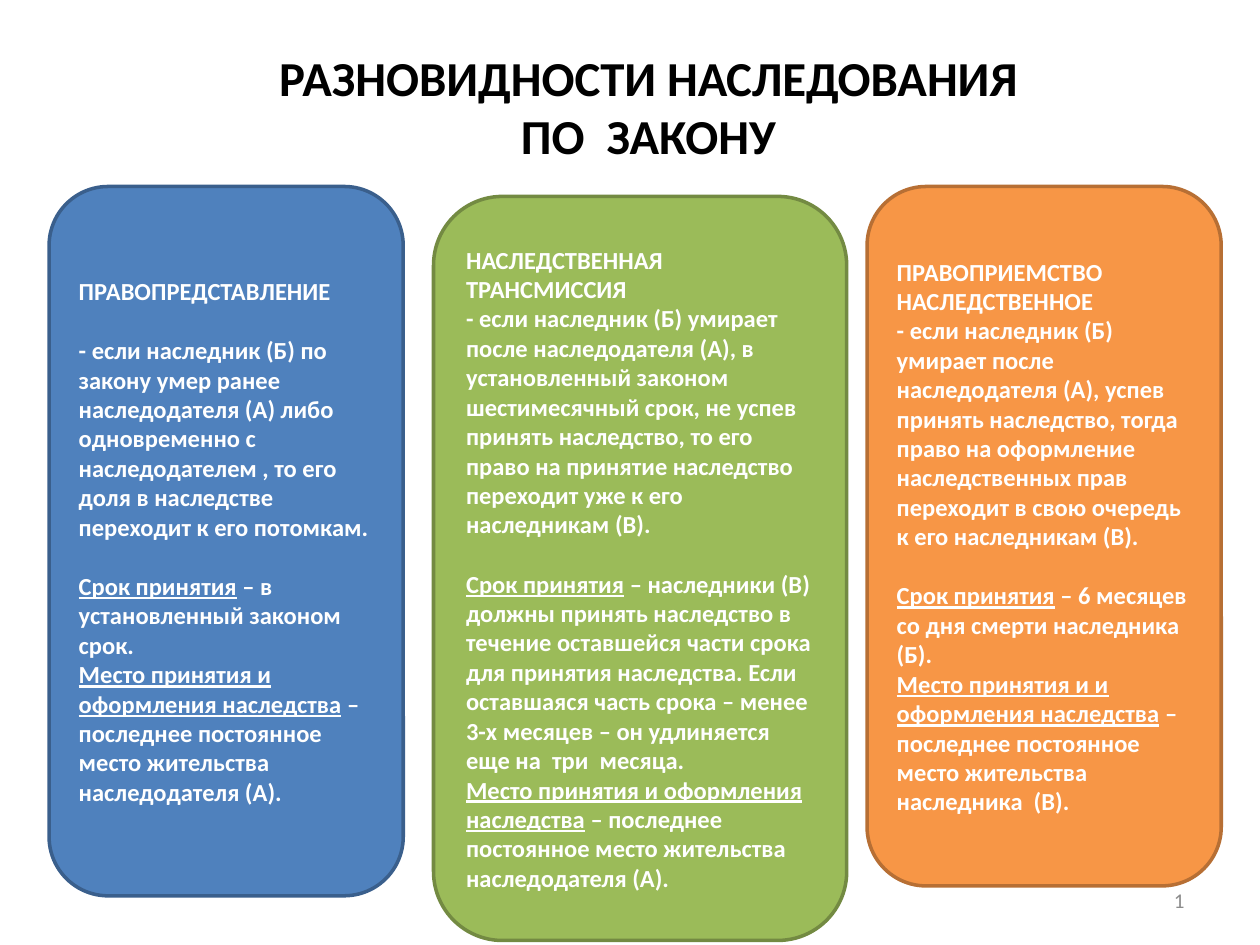
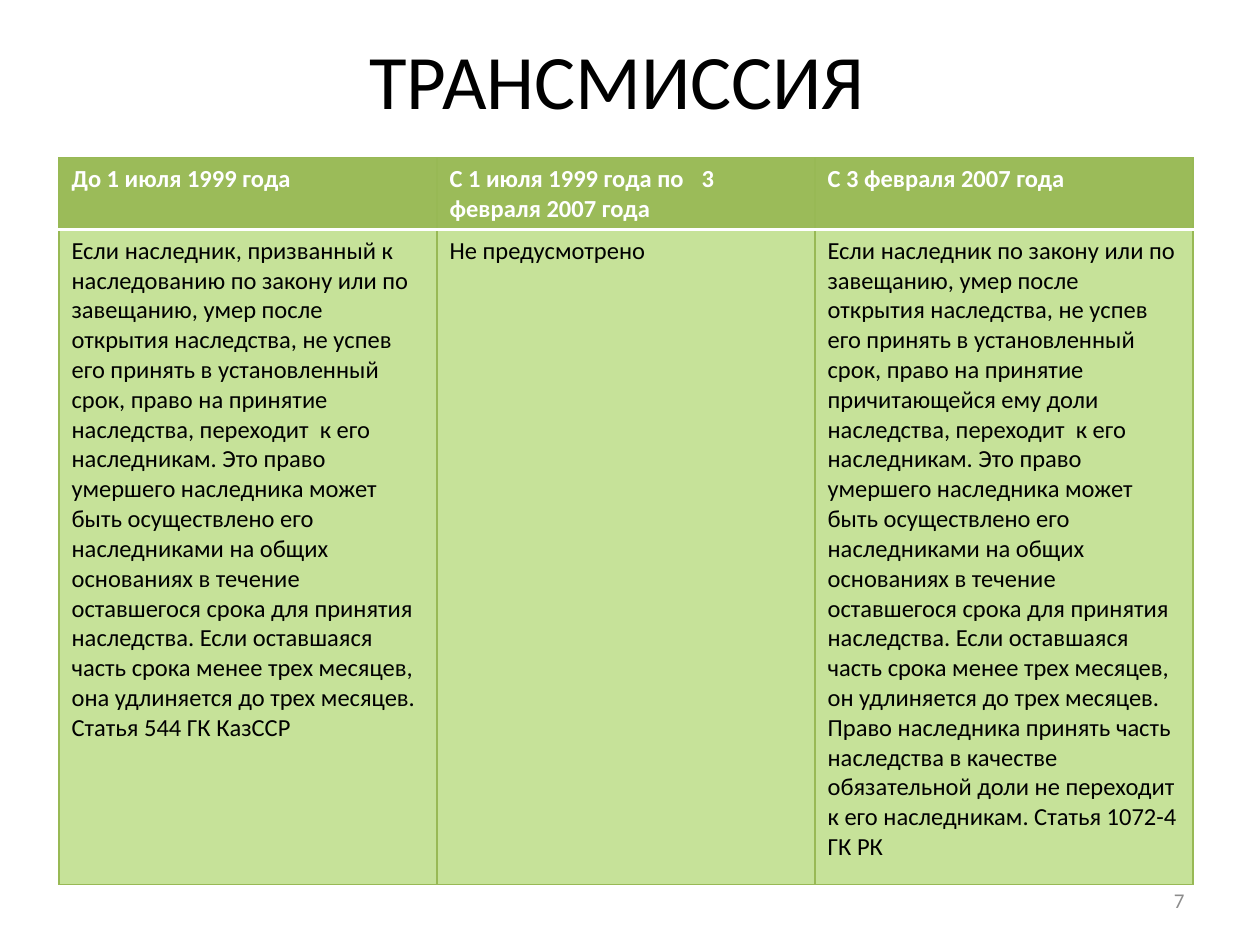
"""Build two slides on inheritance by law: its varieties and transmission over time."""
from lxml import etree
from pptx import Presentation
from pptx.dml.color import RGBColor
from pptx.enum import shapes, text
from pptx.oxml import ns
from pptx.util import Cm, Pt

FONT = "Calibri"
COLORS = {
    "black": "000000", "white": "FFFFFF", "number": "8C8C8C",
    "blue": "4F81BD", "blue_line": "3A5F8C",
    "green": "9BBB59", "green_line": "738A42",
    "orange": "F79646", "orange_line": "B76F34",
    "cell": "C6E299", "border": "98B955",
}
TERM = "Срок принятия"
PLACE = "Место принятия и оформления наследства"

VARIETIES_TITLE = "РАЗНОВИДНОСТИ НАСЛЕДОВАНИЯ\vПО  ЗАКОНУ"
CARDS = [
    {"color": "blue", "box": (0.99, 3.76, 7.14, 14.3), "gaps": (1, 2), "lines": [
        ("", "ПРАВОПРЕДСТАВЛЕНИЕ"),
        ("", "- если наследник (Б) по закону умер ранее наследодателя (А) либо "
             "одновременно с наследодателем , то его доля в наследстве переходит "
             "к его потомкам."),
        (TERM, " – в установленный законом срок."),
        (PLACE, " – последнее постоянное место жительства наследодателя (А)."),
    ]},
    {"color": "green", "box": (8.74, 3.96, 8.33, 15.0), "gaps": (2,), "lines": [
        ("", "НАСЛЕДСТВЕННАЯ ТРАНСМИССИЯ"),
        ("", "- если наследник (Б) умирает после наследодателя (А), в установленный "
             "законом шестимесячный срок, не успев принять наследство, то его право "
             "на принятие наследство переходит уже к его наследникам (В)."),
        (TERM, " – наследники (В) должны принять наследство в течение оставшейся "
               "части срока для принятия наследства. Если оставшаяся часть срока – "
               "менее 3-х месяцев – он удлиняется еще на  три  месяца."),
        (PLACE, " – последнее постоянное место жительства наследодателя (А)."),
    ]},
    {"color": "orange", "box": (17.48, 3.76, 7.14, 14.1), "gaps": (2,), "lines": [
        ("", "ПРАВОПРИЕМСТВО НАСЛЕДСТВЕННОЕ"),
        ("", "- если наследник (Б) умирает после наследодателя (А), успев принять "
             "наследство, тогда право на оформление наследственных прав переходит "
             "в свою очередь к его наследникам (В)."),
        (TERM, " – 6 месяцев со дня смерти наследника (Б)."),
        ("Место принятия и и оформления наследства",
         " – последнее постоянное место жительства  наследника  (В)."),
    ]},
]

TRANSMISSION_TITLE = "ТРАНСМИССИЯ "
PERIODS = [
    ("До 1 июля 1999 года", "С 1 июля 1999 года по\t3\vфевраля 2007 года",
     "С 3 февраля 2007 года"),
    ("Если наследник, призванный к наследованию по закону или по завещанию, умер "
     "после открытия наследства, не успев его принять в установленный срок, право "
     "на принятие наследства, переходит  к его наследникам. Это право  умершего "
     "наследника может быть осуществлено его наследниками на общих основаниях в "
     "течение оставшегося срока для принятия наследства. Если оставшаяся часть "
     "срока менее трех месяцев, она удлиняется до трех месяцев. "
     "Статья 544 ГК КазССР",
     "Не предусмотрено",
     "Если наследник по закону или по завещанию, умер после открытия наследства, "
     "не успев его принять в установленный срок, право на принятие причитающейся "
     "ему доли наследства, переходит  к его наследникам. Это право  умершего "
     "наследника может быть осуществлено его наследниками на общих основаниях в "
     "течение оставшегося срока для принятия наследства. Если оставшаяся часть "
     "срока менее трех месяцев, он удлиняется до трех месяцев. Право наследника "
     "принять часть наследства в качестве обязательной доли не переходит к его "
     "наследникам. Статья 1072-4 ГК РК"),
]
ROW_HEIGHTS = (1.45, 13.2)


def rgb(name):
    return RGBColor.from_string(COLORS[name])


def cm(box):
    return [Cm(v) for v in box]


def style(p, size, color, bold=False, align=text.PP_ALIGN.LEFT):
    p.alignment = align
    for r in p.runs:
        r.font.name, r.font.size, r.font.bold = FONT, Pt(size), bold
        r.font.color.rgb = rgb(color)


def add_slide(prs, title, box, size, number, bold=False):
    s = prs.slides.add_slide(prs.slide_layouts[5])
    sp = s.shapes.title
    sp.left, sp.top, sp.width, sp.height = cm(box)
    tf = sp.text_frame
    tf.text = title
    tf.auto_size = text.MSO_AUTO_SIZE.NONE
    tf.vertical_anchor = text.MSO_ANCHOR.MIDDLE
    style(tf.paragraphs[0], size, "black", bold, text.PP_ALIGN.CENTER)

    tf = s.shapes.add_textbox(*cm((18.2, 17.65, 5.93, 1.01))).text_frame
    tf.word_wrap = True
    tf.vertical_anchor = text.MSO_ANCHOR.MIDDLE
    tf.text = number
    style(tf.paragraphs[0], 12, "number", align=text.PP_ALIGN.RIGHT)
    return s


def add_card(s, card):
    sp = s.shapes.add_shape(shapes.MSO_SHAPE.ROUNDED_RECTANGLE, *cm(card["box"]))
    sp.shadow.inherit = False
    sp.fill.solid()
    sp.fill.fore_color.rgb = rgb(card["color"])
    sp.line.color.rgb = rgb(card["color"] + "_line")
    sp.line.width = Pt(2)
    tf = sp.text_frame
    tf.word_wrap = True
    tf.vertical_anchor = text.MSO_ANCHOR.MIDDLE
    for i, (label, body) in enumerate(card["lines"]):
        p = tf.add_paragraph() if i else tf.paragraphs[0]
        if label:
            r = p.add_run()
            r.text = label
            r.font.underline = True
        p.add_run().text = body
        style(p, 14, "white", bold=True)
        if i in card["gaps"]:
            p.space_before = Pt(17)


def set_border(cell, side, color, width):
    tc_pr = cell._tc.get_or_add_tcPr()
    ln = etree.Element(ns.qn("a:ln" + side), w=str(Pt(width)))
    fill = etree.SubElement(ln, ns.qn("a:solidFill"))
    etree.SubElement(fill, ns.qn("a:srgbClr"), val=COLORS[color])
    tc_pr.insert("LRTB".index(side), ln)


def add_periods(s):
    rows, cols = len(PERIODS), len(PERIODS[0])
    box = cm((1.19, 3.18, 22.86, sum(ROW_HEIGHTS)))
    table = s.shapes.add_table(rows, cols, *box).table
    table.horz_banding = False
    for i, row in enumerate(PERIODS):
        table.rows[i].height = Cm(ROW_HEIGHTS[i])
        header = i == 0
        for j, words in enumerate(row):
            cell = table.cell(i, j)
            cell.text_frame.text = words
            style(cell.text_frame.paragraphs[0], 14,
                  "white" if header else "black", header)
            cell.fill.solid()
            cell.fill.fore_color.rgb = rgb("green" if header else "cell")
            for side in "LRTB":
                divider = side == ("B" if header else "T")
                set_border(cell, side, *(("white", 2) if divider else ("border", 0.75)))


def main():
    prs = Presentation()
    prs.slide_width, prs.slide_height = Cm(25.4), Cm(19.05)

    s = add_slide(prs, VARIETIES_TITLE, (1.4, 1.4, 23.34, 3.18), 27.9, "1", bold=True)
    tf = s.shapes.title.text_frame
    tf.margin_top, tf.margin_bottom = Cm(0), Cm(1.7)
    for card in CARDS:
        add_card(s, card)

    s = add_slide(prs, TRANSMISSION_TITLE, (1.19, 0, 22.86, 3.18), 44, "7")
    add_periods(s)
    prs.save("out.pptx")


if __name__ == "__main__":
    main()
